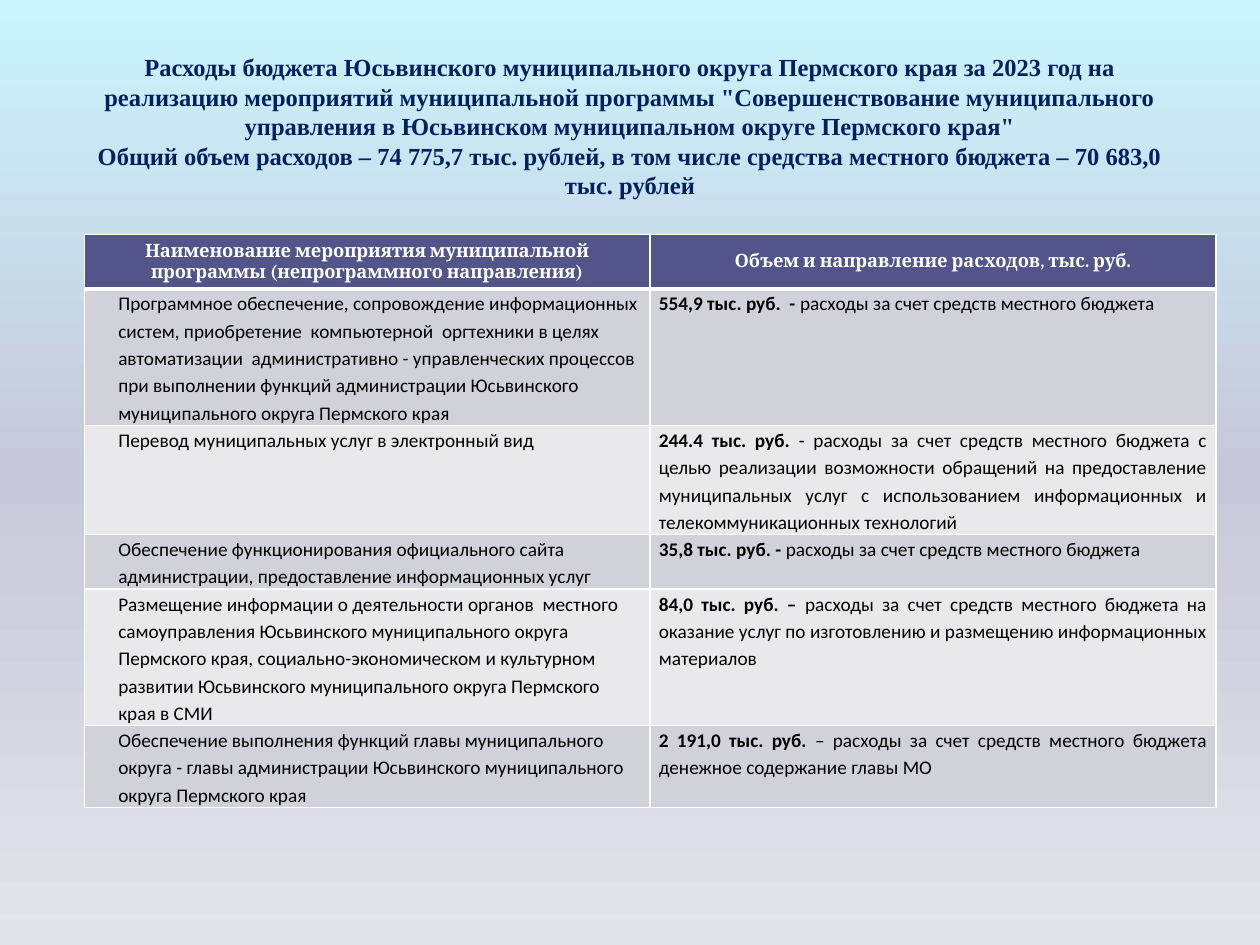
from copy import deepcopy

from lxml import etree
from pptx import Presentation
from pptx.dml.color import RGBColor
from pptx.enum.text import MSO_ANCHOR, PP_ALIGN
from pptx.oxml.ns import qn
from pptx.util import Pt

CENTER, LEFT, JUSTIFY = PP_ALIGN.CENTER, PP_ALIGN.LEFT, PP_ALIGN.JUSTIFY
MIDDLE, TOP = MSO_ANCHOR.MIDDLE, MSO_ANCHOR.TOP

# Content
TITLE = (
    "Расходы бюджета Юсьвинского муниципального округа Пермского края за 2023 год "
    "на реализацию мероприятий муниципальной программы \"Совершенствование "
    "муниципального управления в Юсьвинском муниципальном округе Пермского края\"\v"
    "Общий объем расходов – 74 775,7 тыс. рублей, в том числе средства местного "
    "бюджета – 70 683,0 тыс. рублей"
)
HEADERS = (
    "Наименование мероприятия муниципальной программы (непрограммного направления)",
    "Объем и направление расходов, тыс. руб.",
)
# Activity, amount, purpose
EXPENSES = [
    ("Программное обеспечение, сопровождение информационных систем, приобретение  "
     "компьютерной  оргтехники в целях автоматизации  административно - "
     "управленческих процессов при выполнении функций администрации Юсьвинского "
     "муниципального округа Пермского края",
     "554,9 тыс. руб.  - ", "расходы за счет средств местного бюджета"),
    ("Перевод муниципальных услуг в электронный вид",
     "244.4 тыс. руб. ",
     "- расходы за счет средств местного бюджета с целью реализации возможности "
     "обращений на предоставление муниципальных услуг с использованием "
     "информационных и телекоммуникационных технологий"),
    ("Обеспечение функционирования официального сайта администрации, "
     "предоставление информационных услуг",
     "35,8 тыс. руб. - ", "расходы за счет средств местного бюджета"),
    ("Размещение информации о деятельности органов  местного самоуправления "
     "Юсьвинского муниципального округа Пермского края, социально-экономическом и "
     "культурном развитии Юсьвинского муниципального округа Пермского края в СМИ",
     "84,0 тыс. руб. – ",
     "расходы за счет средств местного бюджета на оказание услуг по изготовлению "
     "и размещению информационных материалов"),
    ("Обеспечение выполнения функций главы муниципального округа - главы "
     "администрации Юсьвинского муниципального округа Пермского края",
     "2 191,0 тыс. руб. ",
     "– расходы за счет средств местного бюджета денежное содержание главы МО"),
]
BACKGROUND = [(0, "CAF4FE"), (0.5, "C7C8D9"), (1, "E4E4EC")]
HEADER_FILL, BAND_FILLS = "53548A", ("D1D1DA", "E9E9ED")
ROW_HEIGHTS = (28, 75, 52, 26, 65, 39)
COLUMN_WIDTH = 323.3


def color(value):
    return RGBColor.from_string(value)


def write(frame, *spans, size, font, ink, align, spacing=None, indent=0):
    """Put (text, bold) spans into the first paragraph of a frame."""
    para = frame.paragraphs[0]
    para.alignment = align
    if spacing:
        para.line_spacing = spacing
    if indent:
        properties = para._p.get_or_add_pPr()
        properties.set("marL", str(Pt(indent)))
        properties.set("indent", "0")
    for text, bold in spans:
        for number, line in enumerate(text.split("\v")):
            if number:
                para.add_line_break()
            span = para.add_run()
            span.text = line
            span.font.size, span.font.name, span.font.bold = Pt(size), font, bold
            span.font.color.rgb = color(ink)


def style_cell(cell, fill, top=1, bottom=1):
    """Fill a cell and give it white borders."""
    cell.fill.solid()
    cell.fill.fore_color.rgb = color(fill)
    properties = cell._tc.get_or_add_tcPr()
    widths = {"lnL": 1, "lnR": 1, "lnT": top, "lnB": bottom}
    for place, (side, width) in enumerate(widths.items()):
        line = etree.Element(qn("a:" + side), w=str(Pt(width)))
        solid = etree.SubElement(line, qn("a:solidFill"))
        etree.SubElement(solid, qn("a:srgbClr"), val="FFFFFF")
        properties.insert(place, line)


deck = Presentation()
deck.slide_width, deck.slide_height = Pt(720), Pt(540)
page = deck.slides.add_slide(deck.slide_layouts[5])

# Background gradient, top to bottom
fill = page.background.fill
fill.gradient()
fill.gradient_angle = 270
stop_list = next(page.element.iter(qn("a:gsLst")))
stop_list.append(deepcopy(stop_list[-1]))
for stop, (position, value) in zip(fill.gradient_stops, BACKGROUND):
    stop.position = position
    stop.color.rgb = color(value)

# Title
title = page.shapes.title
title.left, title.top, title.width, title.height = Pt(36), Pt(21), Pt(648), Pt(102)
title.text_frame.vertical_anchor = MIDDLE
write(title.text_frame, (TITLE, True), size=14, font="Times New Roman",
      ink="002060", align=CENTER)

# Table
table = page.shapes.add_table(
    len(ROW_HEIGHTS), len(HEADERS), Pt(48.2), Pt(133.9),
    Pt(COLUMN_WIDTH * len(HEADERS)), Pt(sum(ROW_HEIGHTS))).table
for row, height in zip(table.rows, ROW_HEIGHTS):
    row.height = Pt(height)
for column in table.columns:
    column.width = Pt(COLUMN_WIDTH)

for cell, text in zip(table.rows[0].cells, HEADERS):
    style_cell(cell, HEADER_FILL, bottom=3)
    cell.vertical_anchor = MIDDLE
    write(cell.text_frame, (text, True), size=10.5, font="Cambria",
          ink="FFFFFF", align=CENTER)

body = dict(size=11, font="Calibri", ink="000000", spacing=1.15)
for number, (activity, amount, purpose) in enumerate(EXPENSES):
    name_cell, sum_cell = table.rows[number + 1].cells
    for cell in (name_cell, sum_cell):
        style_cell(cell, BAND_FILLS[number % 2], top=1 if number else 3)
        cell.vertical_anchor = TOP
        cell.margin_left = cell.margin_right = Pt(5)
        cell.margin_top = cell.margin_bottom = 0
    write(name_cell.text_frame, (activity, False), align=LEFT, indent=14.4, **body)
    write(sum_cell.text_frame, (amount, True), (purpose, False), align=JUSTIFY, **body)

deck.save("out.pptx")
